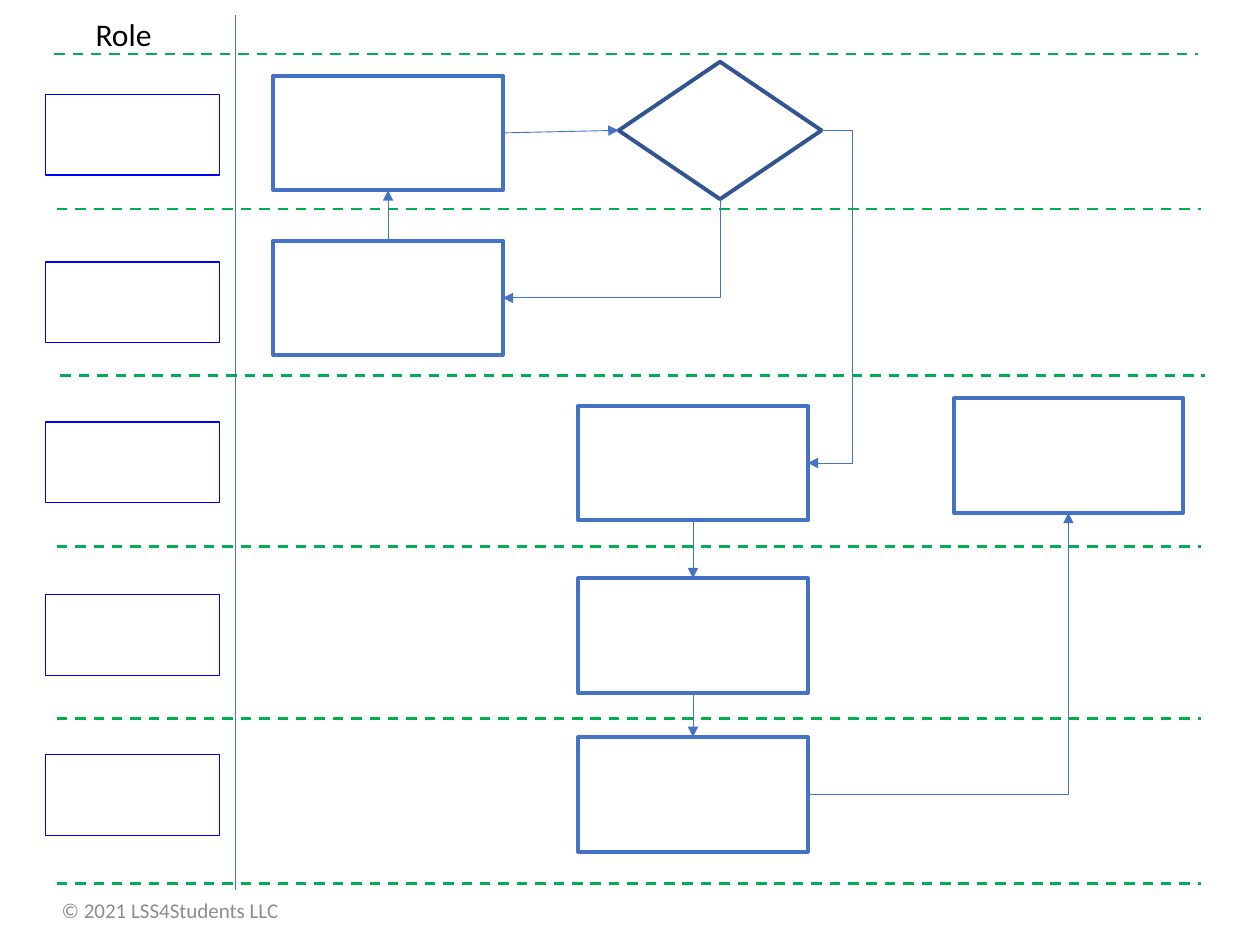
from dataclasses import dataclass
from typing import Any, Optional

from lxml.etree import SubElement
from pptx import Presentation
from pptx.dml.color import RGBColor
from pptx.enum.dml import MSO_LINE
from pptx.enum.shapes import MSO_CONNECTOR, MSO_SHAPE
from pptx.enum.text import MSO_ANCHOR, MSO_AUTO_SIZE, PP_ALIGN
from pptx.oxml.ns import qn
from pptx.util import Inches, Pt

BLUE, DARK_BLUE, ROLE_BLUE, GREEN = "4472C4", "325491", "0000FF", "00B050"
TOP, LEFT, BOTTOM, RIGHT = range(4)
STEP_SIZE = (1.82, 0.91)
ROLE_SIZE = (1.38, 0.64)
LANE_LENGTH = 9.08
BYPASS_X = 6.77


@dataclass(frozen=True)
class Node:
    left: float
    top: float
    size: tuple[float, float] = STEP_SIZE
    color: str = BLUE
    weight: float = 2.25
    preset: MSO_SHAPE = MSO_SHAPE.RECTANGLE
    fill: Optional[str] = None


@dataclass(frozen=True)
class Flow:
    source: str
    source_side: int
    target: str
    target_side: int
    route: str = "straight"


@dataclass(frozen=True)
class Label:
    text: str
    box: tuple[float, float, float, float]
    color: str
    size: float
    align: PP_ALIGN
    frame_format: dict[str, Any]


NODES = {
    "prepare": Node(2.17, 0.6),
    "rework": Node(2.17, 1.91),
    "decision": Node(4.91, 0.49, (1.61, 1.09), DARK_BLUE,
                     preset=MSO_SHAPE.DIAMOND, fill="FFFFFF"),
    "accept": Node(4.59, 3.22),
    "process": Node(4.59, 4.59),
    "check": Node(4.59, 5.85),
    "finish": Node(7.57, 3.16),
}
FLOWS = [
    Flow("prepare", RIGHT, "decision", LEFT),
    Flow("decision", BOTTOM, "rework", RIGHT, "down_left"),
    Flow("rework", TOP, "prepare", BOTTOM),
    Flow("decision", RIGHT, "accept", RIGHT, "bypass"),
    Flow("accept", BOTTOM, "process", TOP),
    Flow("process", BOTTOM, "check", TOP),
    Flow("check", RIGHT, "finish", BOTTOM, "corner"),
]
LANE_STARTS = [(0.43, 0.43), (0.45, 1.66), (0.48, 2.98),
               (0.45, 4.34), (0.45, 5.7), (0.45, 7.01)]
ROLE_TOPS = [0.75, 2.08, 3.35, 4.72, 5.99]
LABELS = [
    Label("Role", (0.66, 0.07, 1.12, 0.4), "000000", 18, PP_ALIGN.LEFT,
          {"word_wrap": True, "auto_size": MSO_AUTO_SIZE.SHAPE_TO_FIT_TEXT}),
    Label("© 2021 LSS4Students LLC", (0.31, 7.09, 2, 0.27), "8C8C8C", 12, PP_ALIGN.RIGHT,
          {"word_wrap": True, "vertical_anchor": MSO_ANCHOR.MIDDLE}),
]


def rgb(color: str) -> RGBColor:
    return RGBColor.from_string(color)


def apply_format(target: Any, values: dict[str, Any]) -> None:
    for name, value in values.items():
        setattr(target, name, value)


def style_line(line: Any, color: str, weight: float) -> None:
    line.color.rgb = rgb(color)
    line.width = Pt(weight)


def draw_node(slide: Any, node: Node) -> Any:
    shape = slide.shapes.add_shape(
        node.preset, *map(Inches, (node.left, node.top, *node.size)))
    shape.shadow.inherit = False
    if node.fill:
        shape.fill.solid()
        shape.fill.fore_color.rgb = rgb(node.fill)
    else:
        shape.fill.background()
    style_line(shape.line, node.color, node.weight)
    return shape


def draw_line(slide: Any, start: tuple[float, float], end: tuple[float, float],
              color: str, weight: float, kind: MSO_CONNECTOR = MSO_CONNECTOR.STRAIGHT) -> Any:
    line = slide.shapes.add_connector(kind, *map(Inches, (*start, *end)))
    style_line(line.line, color, weight)
    SubElement(line._element.spPr, qn("a:effectLst"))
    return line


def route_elbow(connector: Any, route: str) -> None:
    """Bend the connector once at a corner, or twice around BYPASS_X."""
    geometry = connector._element.spPr.find(qn("a:prstGeom"))
    begin_x, end_x = connector.begin_x, connector.end_x
    if route == "bypass":
        share = (begin_x - Inches(BYPASS_X)) / (begin_x - end_x)
        SubElement(geometry.find(qn("a:avLst")), qn("a:gd"),
                   name="adj1", fmla=f"val {round(share * 100000)}")
        return
    geometry.set("prst", "bentConnector2")
    if route == "down_left":
        left, top, width, height = (connector.left, connector.top,
                                    connector.width, connector.height)
        transform = connector._element.spPr.find(qn("a:xfrm"))
        transform.attrib.clear()
        transform.set("rot", str(90 * 60000))
        shift = (width - height) // 2
        apply_format(connector, {"left": left + shift, "top": top - shift,
                                 "width": height, "height": width})


def draw_flow(slide: Any, flow: Flow, shapes: dict[str, Any]) -> None:
    kind = MSO_CONNECTOR.STRAIGHT if flow.route == "straight" else MSO_CONNECTOR.ELBOW
    connector = draw_line(slide, (0, 0), (1, 1), BLUE, 0.5, kind)
    connector.begin_connect(shapes[flow.source], flow.source_side)
    connector.end_connect(shapes[flow.target], flow.target_side)
    if flow.route != "straight":
        route_elbow(connector, flow.route)
    SubElement(connector.line._get_or_add_ln(), qn("a:tailEnd"), type="triangle")


def draw_label(slide: Any, label: Label) -> None:
    frame = slide.shapes.add_textbox(*map(Inches, label.box)).text_frame
    apply_format(frame, label.frame_format)
    paragraph = frame.paragraphs[0]
    paragraph.alignment = label.align
    run = paragraph.add_run()
    run.text = label.text
    apply_format(run.font, {"name": "Calibri", "size": Pt(label.size)})
    run.font.color.rgb = rgb(label.color)


def main() -> None:
    presentation = Presentation()
    apply_format(presentation, {"slide_width": Inches(10), "slide_height": Inches(7.5)})
    slide = presentation.slides.add_slide(presentation.slide_layouts[6])

    for left, top in LANE_STARTS:
        lane = draw_line(slide, (left, top), (left + LANE_LENGTH, top), GREEN, 1.5)
        lane.line.dash_style = MSO_LINE.DASH
    draw_line(slide, (1.87, 0.12), (1.87, 7.06), BLUE, 0.5)

    for label in LABELS:
        draw_label(slide, label)
    for top in ROLE_TOPS:
        draw_node(slide, Node(0.36, top, ROLE_SIZE, ROLE_BLUE, 0.75))
    steps = {name: draw_node(slide, node) for name, node in NODES.items()}
    for flow in FLOWS:
        draw_flow(slide, flow, steps)

    presentation.save("out.pptx")


if __name__ == "__main__":
    main()
